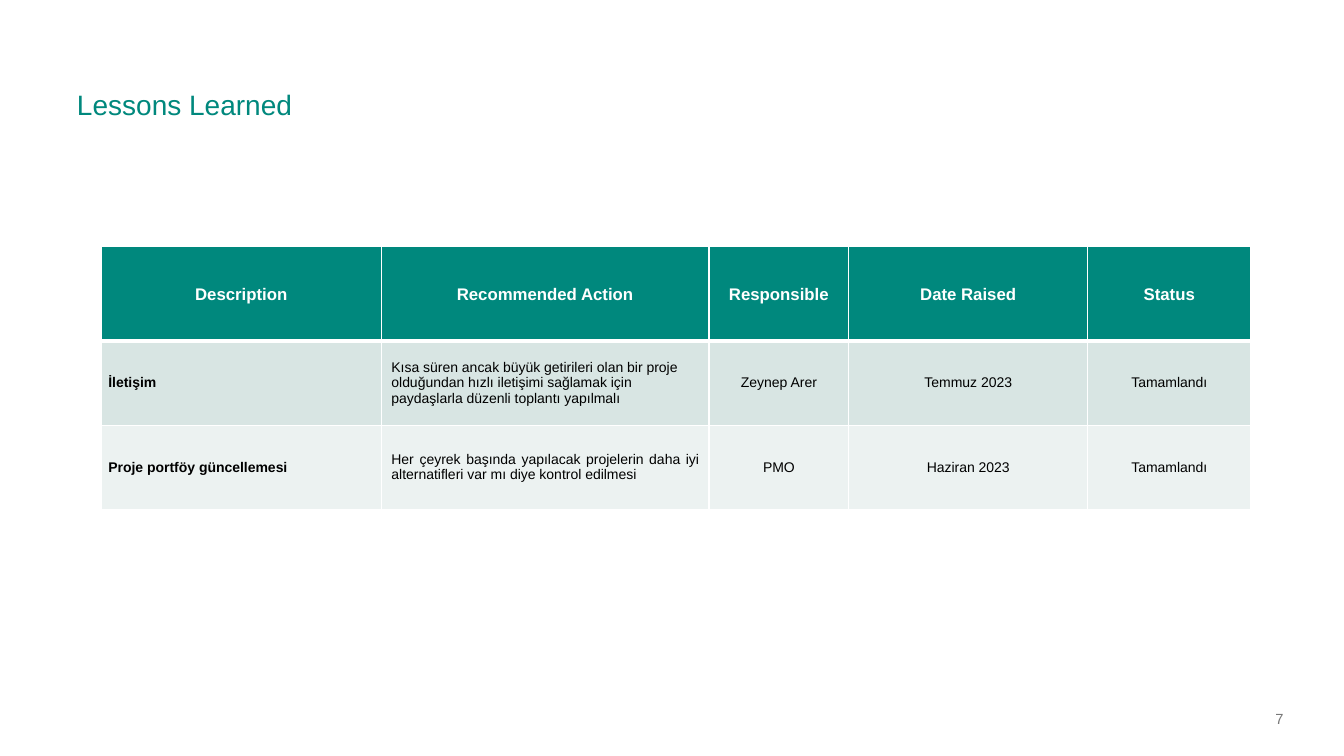
from lxml.etree import SubElement
from pptx import Presentation
from pptx.dml.color import RGBColor
from pptx.enum.text import MSO_ANCHOR, MSO_AUTO_SIZE, PP_ALIGN
from pptx.oxml.ns import qn
from pptx.util import Pt

TEAL, WHITE, BLACK, GREY = "00887D", "FFFFFF", "000000", "777777"
BANDS = [TEAL, "D8E5E3", "ECF2F1"]
WIDTHS = [200, 234, 100, 170.5, 116.8]
HEIGHTS = [67.4, 60.3, 60.3]
LESSONS = [
    ["Description", "Recommended Action", "Responsible", "Date Raised", "Status"],
    ["İletişim",
     "Kısa süren ancak büyük getirileri olan bir proje olduğundan hızlı iletişimi "
     "sağlamak için paydaşlarla düzenli toplantı yapılmalı",
     "Zeynep Arer", "Temmuz 2023", "Tamamlandı"],
    ["Proje portföy güncellemesi",
     "Her çeyrek başında yapılacak projelerin daha iyi alternatifleri var mı diye "
     "kontrol edilmesi",
     "PMO", "Haziran 2023", "Tamamlandı"],
]


def color(code):
    return RGBColor.from_string(code)


def style(para, size, code, align=PP_ALIGN.LEFT, bold=False):
    para.alignment = align
    for run in para.runs:
        font = run.font
        font.name, font.size, font.bold = "Arial", Pt(size), bold
        font.color.rgb = color(code)


def inset(frame, side, edge):
    frame.margin_left = frame.margin_right = Pt(side)
    frame.margin_top = frame.margin_bottom = Pt(edge)


def place(shape, box):
    shape.left, shape.top, shape.width, shape.height = map(Pt, box)


def border(cell, widths):
    props = cell._tc.get_or_add_tcPr()
    for spot, (side, width) in enumerate(widths.items()):
        line = props.makeelement(qn(f"a:ln{side}"), {"w": str(Pt(width))})
        fill = SubElement(line, qn("a:solidFill"))
        SubElement(fill, qn("a:srgbClr"), val=WHITE)
        props.insert(spot, line)


# Title
def add_title(slide, box):
    title = slide.shapes.title
    place(title, box)
    frame = title.text_frame
    frame.text = "Lessons Learned"
    frame.auto_size = MSO_AUTO_SIZE.NONE
    frame.vertical_anchor = MSO_ANCHOR.BOTTOM
    inset(frame, 0, 0)
    para = frame.paragraphs[0]
    para.line_spacing = 0.9
    style(para, 20, TEAL)


# One table cell
def fill_cell(cell, text, row, col):
    head = row == 0
    cell.text = text
    cell.fill.solid()
    cell.fill.fore_color.rgb = color(BANDS[row])
    cell.vertical_anchor = MSO_ANCHOR.MIDDLE
    if head or col == 0:
        inset(cell, 5, 0)
    else:
        inset(cell, 7.2, 3.6)
    align = PP_ALIGN.CENTER
    if not head and col < 2:
        align = PP_ALIGN.JUSTIFY if (row, col) == (2, 1) else PP_ALIGN.LEFT
    para = cell.text_frame.paragraphs[0]
    if head:
        para.line_spacing = 1.07
    style(para, 12 if head else 10, WHITE if head else BLACK, align, head or col == 0)
    border(cell, {"L": 1, "R": 1, "T": 3 if row == 1 else 1, "B": 3 if head else 1})


# Lessons table
def add_grid(slide, left, top):
    box = map(Pt, (left, top, sum(WIDTHS), sum(HEIGHTS)))
    table = slide.shapes.add_table(len(HEIGHTS), len(WIDTHS), *box).table
    table.first_row = table.horz_banding = False
    for col, width in zip(table.columns, WIDTHS):
        col.width = Pt(width)
    for row, height in zip(table.rows, HEIGHTS):
        row.height = Pt(height)
    for row, texts in enumerate(LESSONS):
        for col, text in enumerate(texts):
            fill_cell(table.cell(row, col), text, row, col)


# Page number
def add_page(slide, box):
    frame = slide.shapes.add_textbox(*map(Pt, box)).text_frame
    frame.text = "7"
    frame.word_wrap = True
    frame.vertical_anchor = MSO_ANCHOR.MIDDLE
    inset(frame, 0, 3.6)
    style(frame.paragraphs[0], 10.5, GREY)


def main():
    deck = Presentation()
    deck.slide_width, deck.slide_height = Pt(960), Pt(540)
    slide = deck.slides.add_slide(deck.slide_layouts[5])
    add_grid(slide, 72.4, 176)
    add_title(slide, (55, 55.4, 856, 31.7))
    add_page(slide, (911, 499, 46, 28.8))
    deck.save("out.pptx")


if __name__ == "__main__":
    main()
